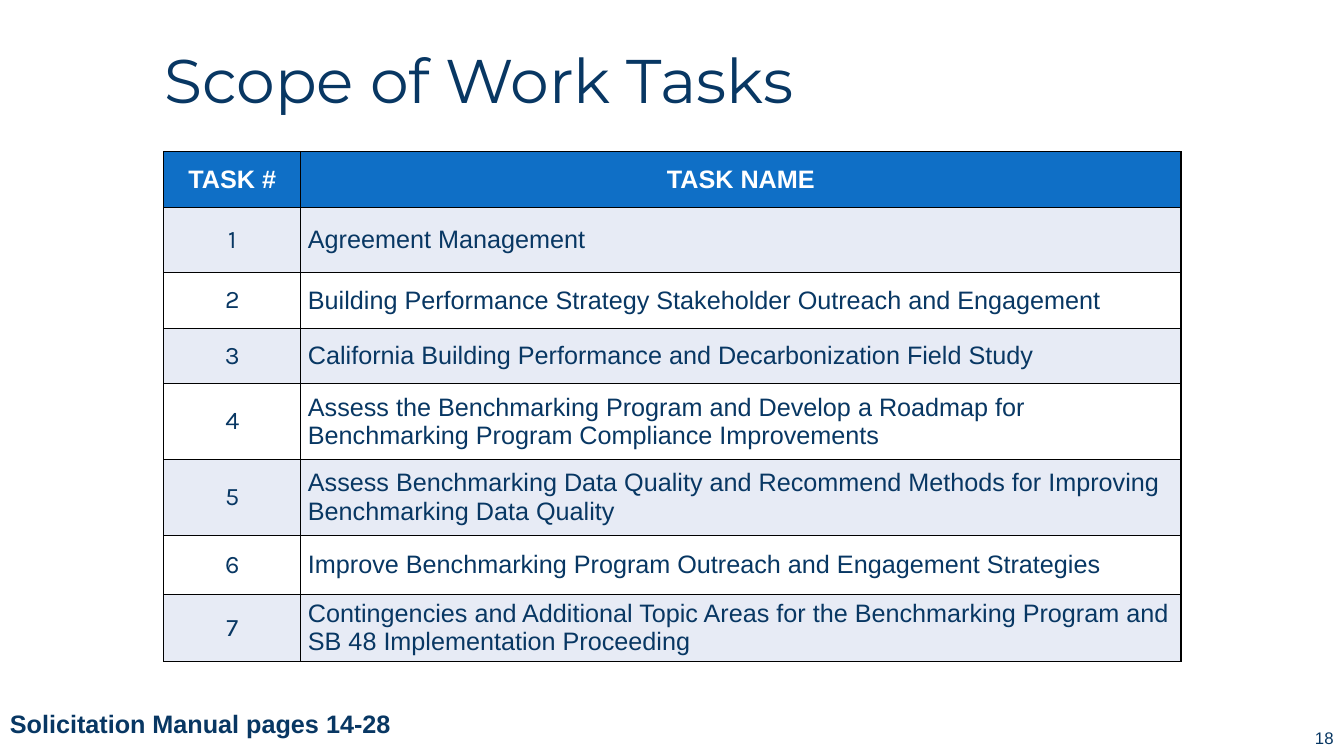
from lxml.etree import SubElement
from pptx import Presentation
from pptx.dml.color import RGBColor
from pptx.enum.text import MSO_ANCHOR as Anchor, MSO_AUTO_SIZE as AutoSize, PP_ALIGN as Align
from pptx.oxml.ns import qn
from pptx.util import Cm, Pt

NAVY = RGBColor(0x08, 0x37, 0x63)
BLUE = RGBColor(0x0F, 0x6F, 0xC6)
PALE = RGBColor(0xE7, 0xEB, 0xF5)
WHITE = RGBColor(0xFF, 0xFF, 0xFF)
BLACK = RGBColor(0x00, 0x00, 0x00)

COLUMN_WIDTHS = [3.45, 22.18]
ROWS = [
    (1.4, "TASK #", "TASK NAME"),
    (1.65, "1", "Agreement Management"),
    (1.4, "2", "Building Performance Strategy Stakeholder Outreach and Engagement"),
    (1.4, "3", "California Building Performance and Decarbonization Field Study"),
    (1.91, "4", "Assess the Benchmarking Program and Develop a Roadmap for "
                "Benchmarking Program Compliance Improvements"),
    (1.91, "5", "Assess Benchmarking Data Quality and Recommend Methods for Improving "
                "Benchmarking Data Quality"),
    (1.5, "6", "Improve Benchmarking Program Outreach and Engagement Strategies"),
    (1.68, "7", "Contingencies and Additional Topic Areas for the Benchmarking Program and "
                "SB 48 Implementation Proceeding"),
]


def write(text_frame, text, size, font_name="Arial", color=NAVY, bold=False, align=Align.LEFT):
    paragraph = text_frame.paragraphs[0]
    paragraph.alignment = align
    run = paragraph.add_run()
    run.text = text
    run.font.size = Pt(size)
    run.font.name = font_name
    run.font.color.rgb = color
    run.font.bold = bold
    return paragraph


def add_borders(cell):
    properties = cell._tc.get_or_add_tcPr()
    for side in ("lnL", "lnR", "lnT", "lnB"):
        line = SubElement(properties, qn(f"a:{side}"), w=str(Pt(1)))
        fill = SubElement(line, qn("a:solidFill"))
        SubElement(fill, qn("a:srgbClr"), val=str(BLACK))


presentation = Presentation()
presentation.slide_width = Cm(33.87)
presentation.slide_height = Cm(19.05)
slide = presentation.slides.add_slide(presentation.slide_layouts[5])

title = slide.shapes.title
title.left, title.top, title.width, title.height = Cm(3.89), Cm(0.66), Cm(27.66), Cm(2.9)
title.text_frame.vertical_anchor = Anchor.MIDDLE
write(title.text_frame, "Scope of Work Tasks", 44, "Montserrat").line_spacing = 0.9

table = slide.shapes.add_table(
    len(ROWS), len(COLUMN_WIDTHS), Cm(4.13), Cm(3.82),
    Cm(sum(COLUMN_WIDTHS)), Cm(sum(row[0] for row in ROWS)),
).table
for column, width in zip(table.columns, COLUMN_WIDTHS):
    column.width = Cm(width)

for row_index, (height, *texts) in enumerate(ROWS):
    table.rows[row_index].height = Cm(height)
    is_header = row_index == 0
    background = BLUE if is_header else PALE if row_index % 2 else WHITE
    for column_index, text in enumerate(texts):
        cell = table.cell(row_index, column_index)
        is_number = column_index == 0 and not is_header
        cell.vertical_anchor = Anchor.MIDDLE
        cell.margin_left = cell.margin_right = Cm(0.18)
        cell.margin_top = cell.margin_bottom = 0
        add_borders(cell)
        cell.fill.solid()
        cell.fill.fore_color.rgb = background
        write(
            cell.text_frame, text, 18,
            font_name="Karla" if is_number else "Arial",
            color=WHITE if is_header else NAVY,
            bold=is_header,
            align=Align.CENTER if is_header or is_number else Align.LEFT,
        )

manual_note = slide.shapes.add_textbox(0, Cm(17.73), Cm(10.92), Cm(1.03)).text_frame
manual_note.word_wrap = True
manual_note.auto_size = AutoSize.SHAPE_TO_FIT_TEXT
write(manual_note, "Solicitation Manual pages 14-28", 18, bold=True)

page_number = slide.shapes.add_textbox(Cm(28.86), Cm(18.08), Cm(5), Cm(1.02)).text_frame
page_number.word_wrap = True
page_number.vertical_anchor = Anchor.MIDDLE
write(page_number, "18", 12, align=Align.RIGHT)

presentation.save("out.pptx")
